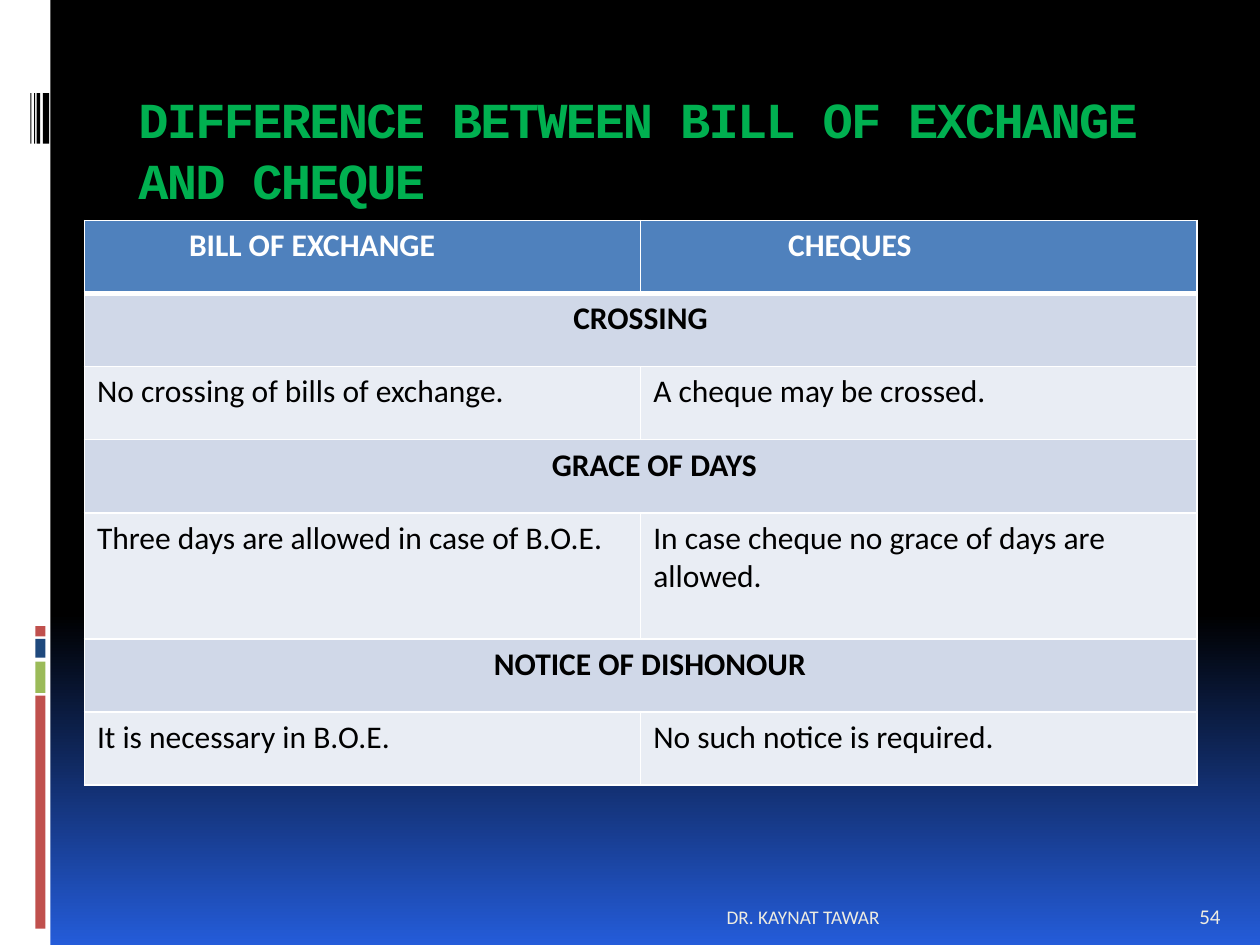
import pptx
import pptx.dml.color
import pptx.enum.shapes
import pptx.enum.text
import pptx.oxml
import pptx.oxml.ns
import pptx.util
from pptx.util import Inches

COLORS = {
    "black": "000000", "white": "FFFFFF", "sky": "245CD9", "red": "C0504D",
    "green": "9BBB59", "navy": "1F497D", "title": "00B050", "footer": "EEECE1",
    "header": "4F81BD", "topic": "D0D8E8", "detail": "E9EDF4",
}
ANCHOR = pptx.enum.text.MSO_ANCHOR
ALIGN = pptx.enum.text.PP_ALIGN

# left, top, width, height, colour
SIDEBAR = [
    (0, 0, 0.4, 7.5, "white"),
    (0.28, 5.52, 0.08, 1.85, "red"),
    (0.28, 5.25, 0.08, 0.25, "green"),
    (0.28, 5.07, 0.08, 0.15, "navy"),
    (0.28, 4.97, 0.08, 0.08, "red"),
    (0.34, 0.74, 0.05, 0.4, "black"),
    (0.29, 0.74, 0.03, 0.4, "black"),
    (0.27, 0.74, 0.01, 0.4, "black"),
    (0.24, 0.74, 0.01, 0.4, "black"),
]

# row kind, height, (text, left indent) per cell; a topic spans both columns
COMPARISON = [
    ("header", 0.58, [("BILL OF EXCHANGE", 0.83), ("CHEQUES", 1.17)]),
    ("topic", 0.58, [("CROSSING", 3.88)]),
    ("detail", 0.58, [("No crossing of bills of exchange.", 0.1),
                      ("A cheque may be crossed.", 0.1)]),
    ("topic", 0.58, [("GRACE OF DAYS", 3.71)]),
    ("detail", 1.0, [("Three days are allowed in case of B.O.E.", 0.1),
                     ("In case cheque no grace of days are allowed.", 0.1)]),
    ("topic", 0.58, [("NOTICE OF DISHONOUR", 3.25)]),
    ("detail", 0.58, [("It is necessary in B.O.E.", 0.1),
                      ("No such notice is required.", 0.1)]),
]


def rgb(name):
    return pptx.dml.color.RGBColor.from_string(COLORS[name])


def style(paragraph, size, color, face="Calibri", bold=False):
    font = paragraph.font
    font.size, font.name, font.bold = pptx.util.Pt(size), face, bold
    font.color.rgb = rgb(color)


def paint_background(slide):
    fill = slide.background.fill
    fill.gradient()
    fill.gradient_angle = 270
    for stop, position, color in zip(fill.gradient_stops, (0.65, 1), ("black", "sky")):
        stop.position = position
        stop.color.rgb = rgb(color)


def add_bar(slide, left, top, width, height, color):
    bar = slide.shapes.add_shape(
        pptx.enum.shapes.MSO_SHAPE.RECTANGLE,
        Inches(left), Inches(top), Inches(width), Inches(height))
    bar.shadow.inherit = False
    bar.fill.solid()
    bar.fill.fore_color.rgb = rgb(color)
    bar.line.fill.background()


def add_text(slide, text, left, top, width, height, anchor=ANCHOR.BOTTOM,
             align=ALIGN.LEFT, **look):
    frame = slide.shapes.add_textbox(
        Inches(left), Inches(top), Inches(width), Inches(height)).text_frame
    frame.word_wrap = True
    frame.vertical_anchor = anchor
    frame.text = text
    paragraph = frame.paragraphs[0]
    paragraph.alignment = align
    style(paragraph, **look)
    return frame


def add_title(slide):
    title = add_text(slide, "DIFFERENCE BETWEEN BILL OF EXCHANGE AND CHEQUE",
                     1, 0.56, 8.5, 1, anchor=ANCHOR.TOP,
                     size=28.8, color="title", face="Courier New", bold=True)
    title.margin_top = Inches(0.14)
    # Letters set 1 pt closer
    title.paragraphs[0].runs[0].font._element.set("spc", "-100")


def add_borders(cell, bottom_width):
    properties = cell._tc.get_or_add_tcPr()
    widths = {"lnL": 1, "lnR": 1, "lnT": 1, "lnB": bottom_width}
    for index, (side, width) in enumerate(widths.items()):
        properties.insert(index, pptx.oxml.parse_xml(
            f'<a:{side} {pptx.oxml.ns.nsdecls("a")} w="{pptx.util.Pt(width)}">'
            f'<a:solidFill><a:srgbClr val="{COLORS["white"]}"/></a:solidFill>'
            f'</a:{side}>'))


def add_comparison(slide):
    width = 8.83
    height = sum(row_height for _, row_height, _ in COMPARISON)
    table = slide.shapes.add_table(
        len(COMPARISON), 2, Inches(0.67), Inches(1.75),
        Inches(width), Inches(height)).table
    for column in table.columns:
        column.width = Inches(width / 2)

    for r, (kind, row_height, entries) in enumerate(COMPARISON):
        table.rows[r].height = Inches(row_height)
        for cell in table.rows[r].cells:
            cell.fill.solid()
            cell.fill.fore_color.rgb = rgb(kind)
            add_borders(cell, 3 if kind == "header" else 1)
        if kind == "topic":
            table.cell(r, 0).merge(table.cell(r, 1))
        for c, (text, indent) in enumerate(entries):
            cell = table.cell(r, c)
            cell.text = text
            cell.margin_left = Inches(indent)
            style(cell.text_frame.paragraphs[0], 18,
                  "white" if kind == "header" else "black",
                  bold=kind != "detail")


def main():
    deck = pptx.Presentation()
    deck.slide_width, deck.slide_height = Inches(10), Inches(7.5)
    slide = deck.slides.add_slide(deck.slide_layouts[6])

    # Backdrop and side strip
    paint_background(slide)
    for bar in SIDEBAR:
        add_bar(slide, *bar)

    # Content
    add_title(slide)
    add_comparison(slide)

    # Footer
    add_text(slide, "54", 9.42, 7.02, 0.5, 0.4, size=12, color="footer")
    add_text(slide, "DR. KAYNAT TAWAR", 1, 7.02, 6.08, 0.4, align=ALIGN.RIGHT,
             size=11, color="footer")
    deck.save("out.pptx")


if __name__ == "__main__":
    main()
